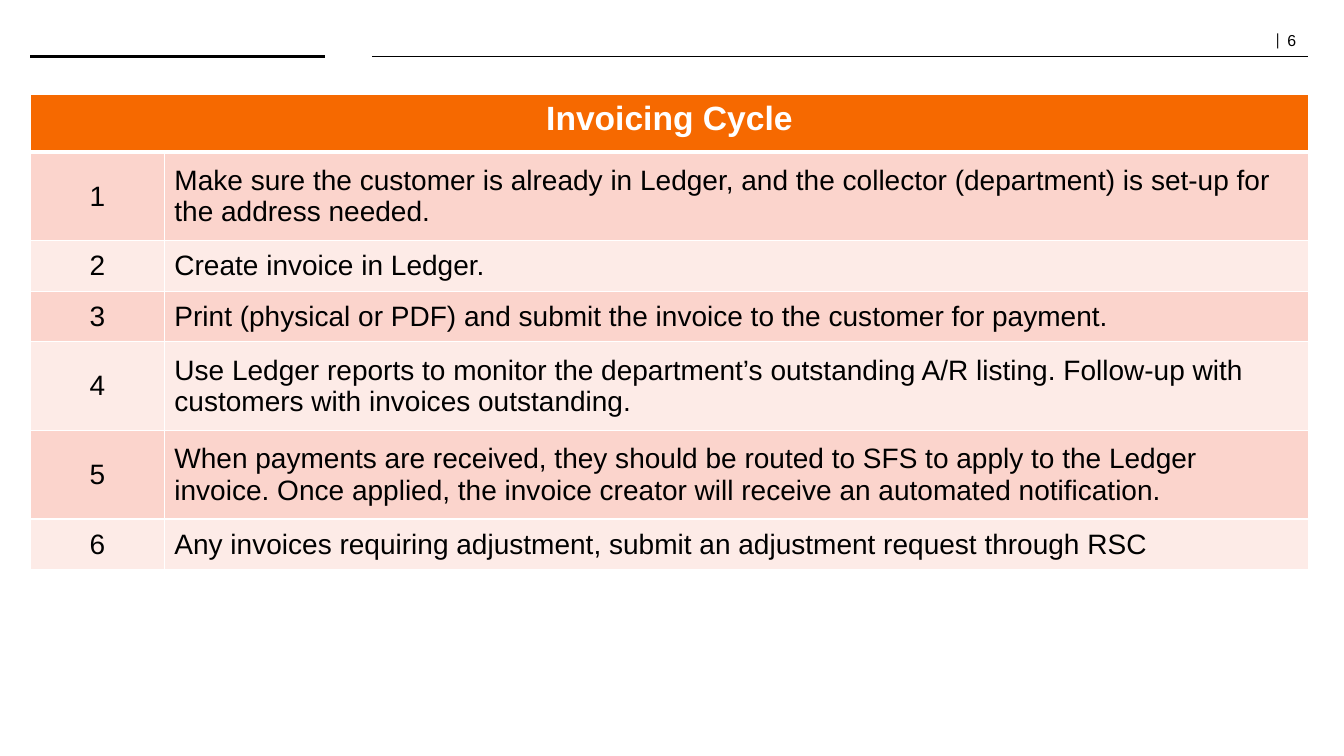
from dataclasses import dataclass

from lxml.etree import SubElement
from pptx import Presentation
from pptx.dml.color import RGBColor
from pptx.enum.shapes import MSO_CONNECTOR as CONN
from pptx.enum.text import MSO_ANCHOR as ANCHOR, MSO_AUTO_SIZE as FIT, PP_ALIGN as ALIGN
from pptx.oxml.ns import qn
from pptx.util import Inches, Pt

BLACK = "000000"
WHITE = "FFFFFF"
ORANGE = "F66900"
BANDS = ("FBD4CC", "FDEBE7")
COL_WIDTHS = (1.33, 11.35)
HEADER_HEIGHT = 0.57


@dataclass
class Rule:
    left: float
    right: float
    weight: float


@dataclass
class Step:
    text: str
    height: float


RULES = [Rule(0.3, 3.22, 2), Rule(3.69, 12.97, 1)]

STEPS = [
    Step("Make sure the customer is already in Ledger, and the collector "
         "(department) is set-up for the address needed.", 0.88),
    Step("Create invoice in Ledger.", 0.5),
    Step("Print (physical or PDF) and submit the invoice to the customer for payment.", 0.5),
    Step("Use Ledger reports to monitor the department’s outstanding A/R listing. "
         "Follow-up with customers with invoices outstanding.", 0.88),
    Step("When payments are received, they should be routed to SFS to apply to the "
         "Ledger invoice. Once applied, the invoice creator will receive an "
         "automated notification.", 0.88),
    Step("Any invoices requiring adjustment, submit an adjustment request through RSC", 0.5),
]


def rgb(color: str) -> RGBColor:
    return RGBColor.from_string(color)


def style(r, size: float, color: str = BLACK, name: str = "Arial", bold: bool = False) -> None:
    r.font.size = Pt(size)
    r.font.name = name
    r.font.bold = bold
    r.font.color.rgb = rgb(color)


def draw_rule(s, rule: Rule) -> None:
    y = Inches(0.56)
    line = s.shapes.add_connector(CONN.STRAIGHT, Inches(rule.left), y, Inches(rule.right), y)
    line.line.color.rgb = rgb(BLACK)
    line.line.width = Pt(rule.weight)
    SubElement(line._element.spPr, qn("a:effectLst"))


def draw_page_number(s, number: int) -> None:
    tf = s.shapes.add_textbox(Inches(12.55), Inches(0.28), Inches(1.36), Inches(0.26)).text_frame
    tf.word_wrap = True
    tf.auto_size = FIT.SHAPE_TO_FIT_TEXT
    p = tf.paragraphs[0]
    p.text = "|\t"
    tabs = SubElement(p._p.get_or_add_pPr(), qn("a:tabLst"))
    SubElement(tabs, qn("a:tab"), pos=str(Inches(0.12)), algn="l")
    p.line_spacing = 0.8
    style(p.runs[0], 12, name="Cambria")
    r = p.add_run()
    r.text = str(number)
    style(r, 11.3)


def paint_cell(cell, fill: str, bottom: float = 1) -> None:
    tc_pr = cell._tc.get_or_add_tcPr()
    for side, weight in (("L", 1), ("R", 1), ("T", 1), ("B", bottom)):
        ln = SubElement(tc_pr, qn(f"a:ln{side}"), w=str(Pt(weight)))
        SubElement(SubElement(ln, qn("a:solidFill")), qn("a:srgbClr"), val=WHITE)
    cell.fill.solid()
    cell.fill.fore_color.rgb = rgb(fill)


def write_cell(cell, text: str, size: float, align: ALIGN, color: str = BLACK,
               bold: bool = False) -> None:
    cell.text_frame.text = text
    p = cell.text_frame.paragraphs[0]
    p.alignment = align
    style(p.runs[0], size, color, bold=bold)


def draw_table(s, title: str, steps: list[Step]) -> None:
    heights = [HEADER_HEIGHT] + [step.height for step in steps]
    table = s.shapes.add_table(len(heights), len(COL_WIDTHS), Inches(0.3), Inches(0.94),
                               Inches(sum(COL_WIDTHS)), Inches(sum(heights))).table
    for column, width in zip(table.columns, COL_WIDTHS):
        column.width = Inches(width)
    for row, height in zip(table.rows, heights):
        row.height = Inches(height)

    for cell in table.rows[0].cells:
        paint_cell(cell, ORANGE, bottom=3)
    header = table.cell(0, 0)
    header.merge(table.cell(0, 1))
    write_cell(header, title, 24, ALIGN.CENTER, WHITE, bold=True)

    for i, step in enumerate(steps, 1):
        content = ((str(i), ALIGN.CENTER), (step.text, ALIGN.LEFT))
        for cell, (text, align) in zip(table.rows[i].cells, content):
            paint_cell(cell, BANDS[(i - 1) % 2])
            cell.vertical_anchor = ANCHOR.MIDDLE
            write_cell(cell, text, 20, align)


def main() -> None:
    prs = Presentation()
    prs.slide_width = Inches(13.33)
    prs.slide_height = Inches(7.5)
    s = prs.slides.add_slide(prs.slide_layouts[6])
    draw_page_number(s, 6)
    for rule in RULES:
        draw_rule(s, rule)
    draw_table(s, "Invoicing Cycle", STEPS)
    prs.save("out.pptx")


if __name__ == "__main__":
    main()
